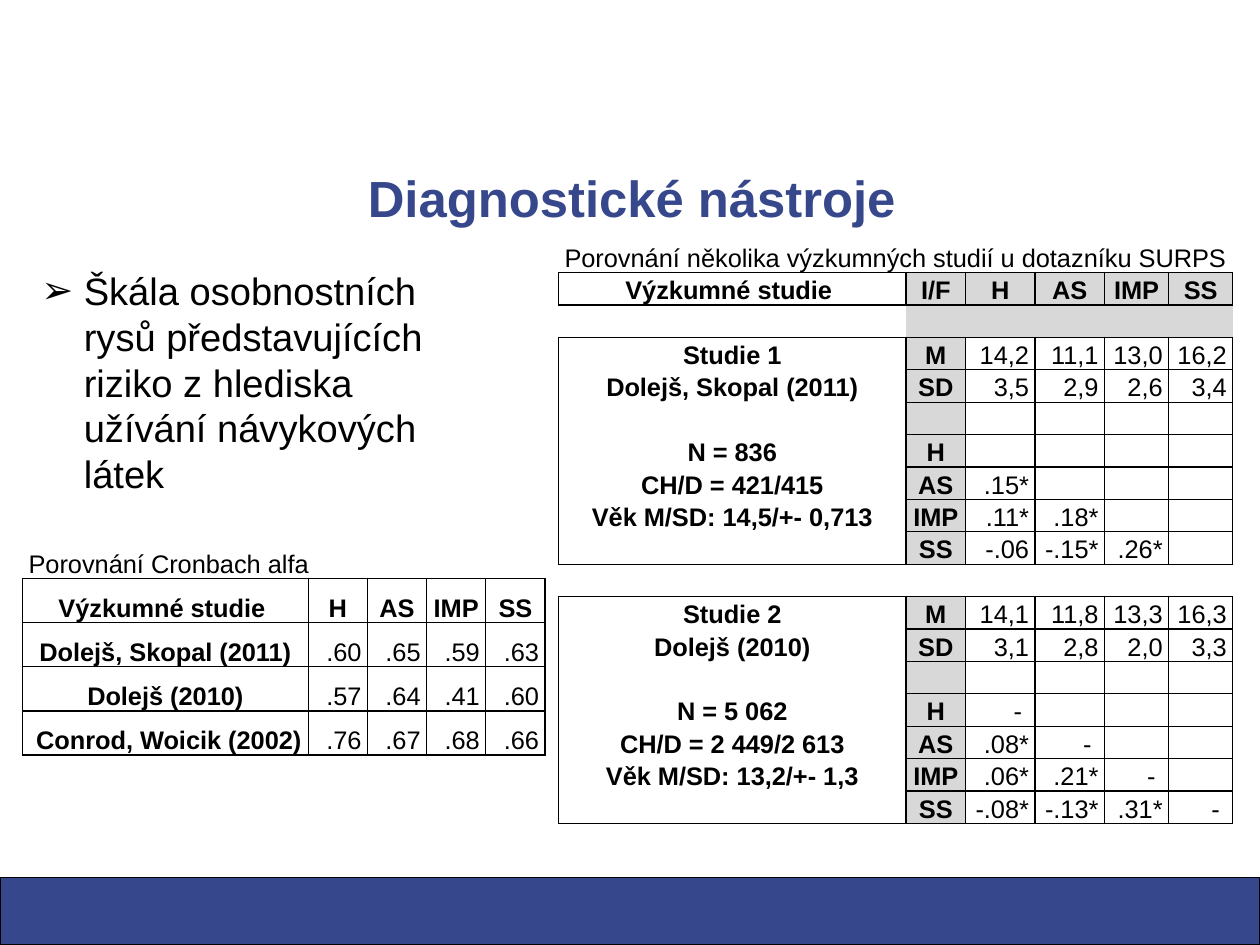
from lxml.etree import SubElement as Sub
from pptx import Presentation
from pptx.dml.color import RGBColor
from pptx.enum.shapes import MSO_SHAPE
from pptx.enum.text import MSO_ANCHOR as ANC, PP_ALIGN as AL
from pptx.oxml.ns import qn
from pptx.util import Pt

BLUE, BLACK, GRAY = "36478B", "000000", "D8D8D8"
WIDE, HIGH = 793.7, 595.28

ALPHA = [
    ["Porovnání Cronbach alfa", "", "", "", ""],
    ["Výzkumné studie ", "H", "AS", "IMP", "SS"],
    ["Dolejš, Skopal (2011)", ".60", ".65", ".59", ".63"],
    ["Dolejš (2010)", ".57", ".64", ".41", ".60"],
    [" Conrod, Woicik (2002)", ".76", ".67", ".68", ".66"],
]
STUDY = [
    ["Porovnání několika výzkumných studií u dotazníku SURPS", "", "", "", "", ""],
    ["Výzkumné studie ", "I/F", "H", "AS", "IMP", "SS"],
    ["", "", "", "", "", ""],
    ["Studie 1", "M", "14,2", "11,1", "13,0", "16,2"],
    ["Dolejš, Skopal (2011)", "SD", "3,5", "2,9", "2,6", "3,4"],
    ["", "", "", "", "", ""],
    ["N = 836", "H", "", "", "", ""],
    ["CH/D = 421/415", "AS", ".15*", "", "", ""],
    ["Věk M/SD: 14,5/+- 0,713", "IMP", ".11*", ".18*", "", ""],
    ["", "SS", "-.06", "-.15*", ".26*", ""],
    ["", "", "", "", "", ""],
    ["Studie 2", "M", "14,1", "11,8", "13,3", "16,3"],
    ["Dolejš (2010)", "SD", "3,1", "2,8", "2,0", "3,3"],
    ["", "", "", "", "", ""],
    ["N = 5 062", "H", "- ", "", "", ""],
    ["CH/D = 2 449/2 613", "AS", ".08*", "- ", "", ""],
    ["Věk M/SD: 13,2/+- 1,3", "IMP", ".06*", ".21*", "- ", ""],
    ["", "SS", "-.08*", "-.13*", ".31*", "- "],
]


def tint(code):
    return RGBColor.from_string(code)


def put(frame, text, size=16, color=BLACK, bold=False, align=AL.LEFT,
        space=1.0, bullet=None, indent=0):
    """Write one formatted paragraph into a text frame."""
    para = frame.paragraphs[0]
    if bullet:
        props = para._p.get_or_add_pPr()
        props.set("marL", str(Pt(indent)))
        props.set("indent", str(-Pt(indent)))
        shade = Sub(props, qn("a:buClr"))
        Sub(shade, qn("a:srgbClr"), val=color)
        Sub(props, qn("a:buFont"), typeface="Arial")
        Sub(props, qn("a:buChar"), char=bullet)
    para.alignment, para.line_spacing = align, space
    if not text:
        Sub(para._p, qn("a:endParaRPr"), sz=str(size * 100))
        return
    run = para.add_run()
    run.text = text
    font = run.font
    font.name, font.size, font.bold = "Arial", Pt(size), bold
    font.color.rgb = tint(color)


def box(slide, left, top, width, height, text, anchor=ANC.TOP, **form):
    """Add a wrapped text box without margins."""
    frame = slide.shapes.add_textbox(
        Pt(left), Pt(top), Pt(width), Pt(height)).text_frame
    frame.word_wrap, frame.vertical_anchor = True, anchor
    frame.margin_left = frame.margin_right = 0
    frame.margin_top = frame.margin_bottom = 0
    put(frame, text, **form)


def band(slide, top, height):
    """Add the coloured strip at the foot."""
    strip = slide.shapes.add_shape(
        MSO_SHAPE.RECTANGLE, 0, Pt(top), Pt(WIDE), Pt(height))
    strip.shadow.inherit = False
    strip.fill.solid()
    strip.fill.fore_color.rgb = tint(BLUE)
    strip.line.color.rgb = tint(BLACK)
    strip.line.width = Pt(0.75)


def edge(cell, sides):
    """Draw the named sides of a cell and clear the others."""
    props = cell._tc.get_or_add_tcPr()
    for side in "LRTB":
        line = Sub(props, qn("a:ln" + side), w=str(Pt(1)))
        if side in sides:
            fill = Sub(line, qn("a:solidFill"))
            Sub(fill, qn("a:srgbClr"), val=BLACK)
        else:
            Sub(line, qn("a:noFill"))


def rule(row, col, gaps, last):
    """Tell which sides of a cell have a line."""
    if row == 0:
        return "B"
    if row in gaps:
        return "TB"
    if gaps and col == 0 and row > 1:
        top = "T" if row - 1 in gaps else ""
        foot = "B" if row + 1 in gaps or row == last else ""
        return "LR" + top + foot
    return "LRTB"


def grid(slide, left, top, data, cols, tall, space, heads=1, gaps=(), gray=()):
    """Add a table with a caption row, a header row and label columns."""
    table = slide.shapes.add_table(
        len(data), len(cols), Pt(left), Pt(top),
        Pt(sum(cols)), Pt(tall * len(data))).table
    table.first_row = table.horz_banding = False
    for col, width in zip(table.columns, cols):
        col.width = Pt(width)
    for r, line in enumerate(data):
        table.rows[r].height = Pt(tall)
        for c, text in enumerate(line):
            cell = table.cell(r, c)
            cell.margin_left = cell.margin_right = Pt(3.8)
            cell.margin_top = cell.margin_bottom = 0
            cell.vertical_anchor = ANC.BOTTOM
            edge(cell, rule(r, c, gaps, len(data) - 1))
            if (r, c) in gray:
                cell.fill.solid()
                cell.fill.fore_color.rgb = tint(GRAY)
            else:
                cell.fill.background()
            label = r == 1 or r > 1 and c < heads
            align = AL.CENTER if label else AL.RIGHT if r else AL.LEFT
            put(cell.text_frame, text, bold=label, align=align,
                space=space if text else 1.0)
    table.cell(0, 0).merge(table.cell(0, len(cols) - 1))


def main():
    deck = Presentation()
    deck.slide_width, deck.slide_height = Pt(WIDE), Pt(HIGH)
    slide = deck.slides.add_slide(deck.slide_layouts[6])

    # Foot, title and bullet
    band(slide, 553, HIGH - 553)
    box(slide, 25.6, 106.3, 754, 39.5, "Diagnostické nástroje ", ANC.MIDDLE,
        size=32, color=BLUE, bold=True, align=AL.CENTER, space=0.96)
    box(slide, 26, 168.5, 276, 219.5,
        "Škála osobnostních rysů představujících riziko "
        "z hlediska užívání návykových látek",
        size=24, bullet="➢", indent=26.8)

    # Reliability table
    grid(slide, 14.2, 336.7, ALPHA, [180] + [37.3] * 4, 27.8, 1.15)

    # Study table: shade the header, the first gap and the label column
    gaps = (2, 10)
    gray = {(r, c) for r in (1, 2) for c in range(1, 6)}
    gray |= {(r, 1) for r in range(3, len(STUDY)) if r not in gaps}
    grid(slide, 351.8, 151.3, STUDY, [219, 37.4, 43.8, 43.8, 40.4, 40.4],
         20.43, 1.06, heads=2, gaps=gaps, gray=gray)
    deck.save("out.pptx")


if __name__ == "__main__":
    main()
